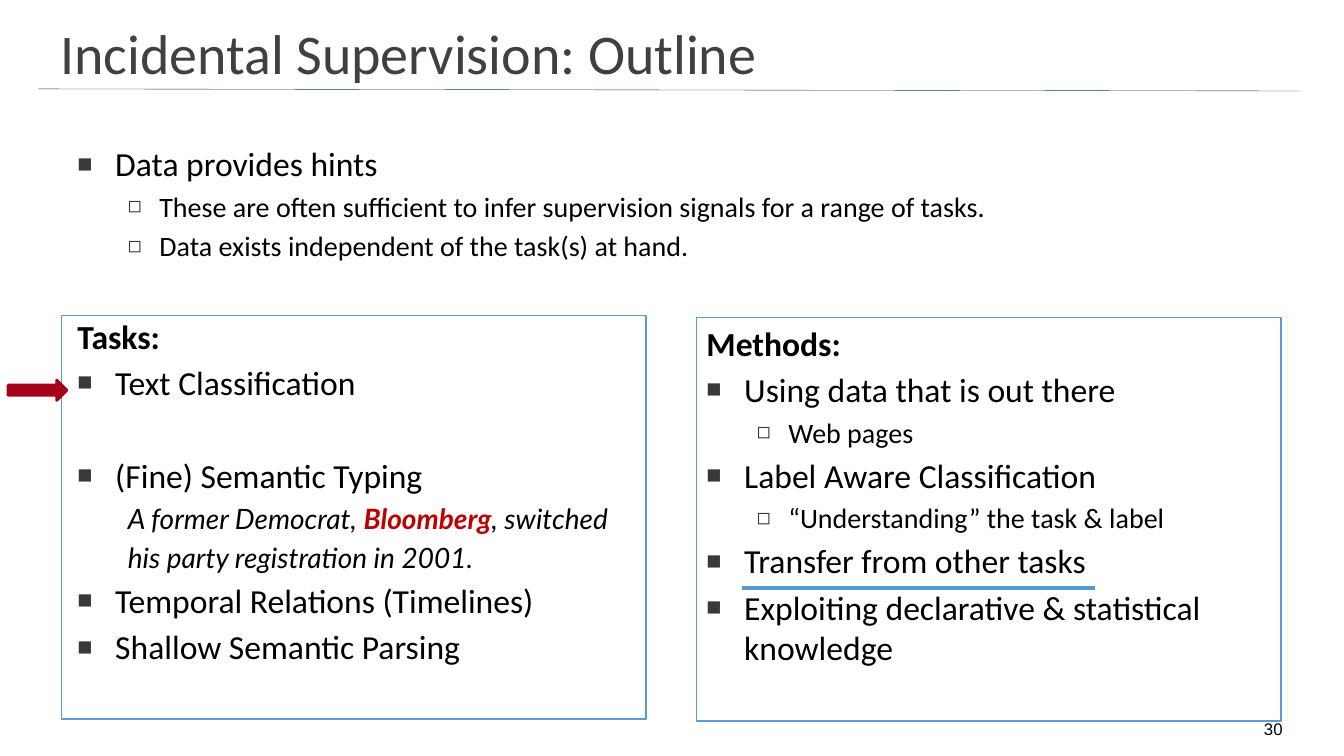
"""Build the outline slide: data hints, a tasks panel and a methods panel."""
import pptx
import pptx.util
import pptx.dml.color
import pptx.enum.shapes
import pptx.enum.text
import pptx.oxml.ns
from lxml import etree

Pt = pptx.util.Pt
RGBColor = pptx.dml.color.RGBColor
Shape = pptx.enum.shapes.MSO_SHAPE
Anchor = pptx.enum.text.MSO_ANCHOR
Align = pptx.enum.text.PP_ALIGN
qn = pptx.oxml.ns.qn

BLACK = RGBColor(0x00, 0x00, 0x00)
TITLE_GREY = RGBColor(0x40, 0x40, 0x40)
BULLET_GREY = RGBColor(0x3B, 0x38, 0x38)
NAVY = RGBColor(0x09, 0x3D, 0x6E)
PANEL_BLUE = RGBColor(0x5B, 0x9B, 0xD5)
MARK_BLUE = RGBColor(0x56, 0x98, 0xD3)
ARROW_RED = RGBColor(0xA7, 0x00, 0x1B)
NAME_RED = RGBColor(0xC0, 0x00, 0x00)

TITLE = "Incidental Supervision: Outline"
PAGE = "30"
OUTLINE = [
    ("point", "Data provides hints"),
    ("detail", "These are often sufficient to infer supervision signals for a range of tasks."),
    ("detail", "Data exists independent of the task(s) at hand."),
    ("gap head", "Tasks:"),
    ("point", "Text Classification"),
    ("gap point", "(Fine) Semantic Typing"),
    ("example", "A former Democrat, |Bloomberg|, switched"),
    ("example", "his party registration in 2001."),
    ("point", "Temporal Relations (Timelines)"),
    ("point", "Shallow Semantic Parsing"),
]
METHODS = [
    ("head", "Methods:"),
    ("point", "Using data that is out there"),
    ("detail", "Web pages"),
    ("point", "Label Aware Classification"),
    ("detail", "“Understanding” the task & label"),
    ("point", "Transfer from other tasks"),
    ("point", "Exploiting declarative & statistical knowledge"),
]

# kind: level, size, font, left margin, indent, bullet, bullet percent
KINDS = {
    "head": (0, 24, "Calibri", 0, 0, None, 0),
    "point": (0, 24, "Calibri", 27, -27, "■", 75),
    "detail": (1, 20, "Calibri", 58.5, -22.5, "◻", 80),
    "example": (1, 20, "Lato", 36, 0, None, 0),
}
SPACE, GAP = 4.2, 37.8
PANEL_W, PANEL_H = 417.6, 288


def add_run(p, text, size, font, color, bold=False, italic=False):
    r = p.add_run()
    r.text = text
    r.font.size, r.font.name = Pt(size), font
    r.font.bold, r.font.italic = bold, italic
    r.font.color.rgb = color


def set_bullet(p, left, indent, char, percent):
    pPr = p._p.get_or_add_pPr()
    pPr.set("marL", str(Pt(left)))
    pPr.set("indent", str(Pt(indent)))
    if char is None:
        etree.SubElement(pPr, qn("a:buNone"))
        return
    clr = etree.SubElement(pPr, qn("a:buClr"))
    etree.SubElement(clr, qn("a:srgbClr"), val=str(BULLET_GREY))
    etree.SubElement(pPr, qn("a:buSzPct"), val=str(percent * 1000))
    etree.SubElement(pPr, qn("a:buFont"), typeface="Arial")
    etree.SubElement(pPr, qn("a:buChar"), char=char)


def fill_list(tf, items):
    tf.word_wrap = True
    tf.vertical_anchor = Anchor.TOP
    for i, (tag, text) in enumerate(items):
        kind = tag.split()[-1]
        level, size, font, left, indent, char, percent = KINDS[kind]
        p = tf.paragraphs[0] if i == 0 else tf.add_paragraph()
        set_bullet(p, left, indent, char, percent)
        p.level = level
        p.alignment = Align.LEFT
        if i:
            p.space_before = Pt(GAP if tag.startswith("gap") else SPACE)
        for j, part in enumerate(text.split("|")):
            marked = j % 2 == 1
            add_run(p, part, size, font, NAME_RED if marked else BLACK,
                    bold=marked or kind == "head", italic=kind == "example")


def add_box(s, x, y, w, h, anchor=Anchor.TOP):
    tf = s.shapes.add_textbox(Pt(x), Pt(y), Pt(w), Pt(h)).text_frame
    tf.word_wrap = True
    tf.vertical_anchor = anchor
    return tf


def add_shape(s, preset, x, y, w, h, line, width, fill=None):
    sp = s.shapes.add_shape(preset, Pt(x), Pt(y), Pt(w), Pt(h))
    sp.shadow.inherit = False
    if fill is None:
        sp.fill.background()
    else:
        sp.fill.solid()
        sp.fill.fore_color.rgb = fill
    sp.line.color.rgb, sp.line.width = line, Pt(width)
    return sp


def add_line(s, x1, y1, x2, y2, color, width):
    line = s.shapes.add_connector(pptx.enum.shapes.MSO_CONNECTOR.STRAIGHT,
                                  Pt(x1), Pt(y1), Pt(x2), Pt(y2))
    line.line.color.rgb, line.line.width = color, Pt(width)
    etree.SubElement(line._element.spPr, qn("a:effectLst"))


def main():
    prs = pptx.Presentation()
    prs.slide_width, prs.slide_height = Pt(960), Pt(540)
    s = prs.slides.add_slide(prs.slide_layouts[6])

    add_line(s, 27.5, 63.5, 929, 65, NAVY, 0.25)
    title = add_box(s, 36, 16.5, 778, 42, Anchor.MIDDLE)
    add_run(title.paragraphs[0], TITLE, 40, "Calibri", TITLE_GREY)

    fill_list(add_box(s, 48.25, 98.75, 864, 353), OUTLINE)

    page = add_box(s, 889.25, 513.25, 40.5, 18, Anchor.BOTTOM)
    page.paragraphs[0].alignment = Align.CENTER
    add_run(page.paragraphs[0], PAGE, 12, "Arial", BLACK)

    methods = add_shape(s, Shape.RECTANGLE, 497.5, 227, PANEL_W, PANEL_H, PANEL_BLUE, 1)
    fill_list(methods.text_frame, METHODS)
    add_shape(s, Shape.RECTANGLE, 44, 225.5, PANEL_W, PANEL_H, PANEL_BLUE, 1)
    add_shape(s, Shape.RIGHT_ARROW, 5.75, 271.5, 42, 14.5, ARROW_RED, 2, ARROW_RED)
    add_line(s, 530, 420, 782, 420, MARK_BLUE, 3)

    prs.save("out.pptx")


if __name__ == "__main__":
    main()
